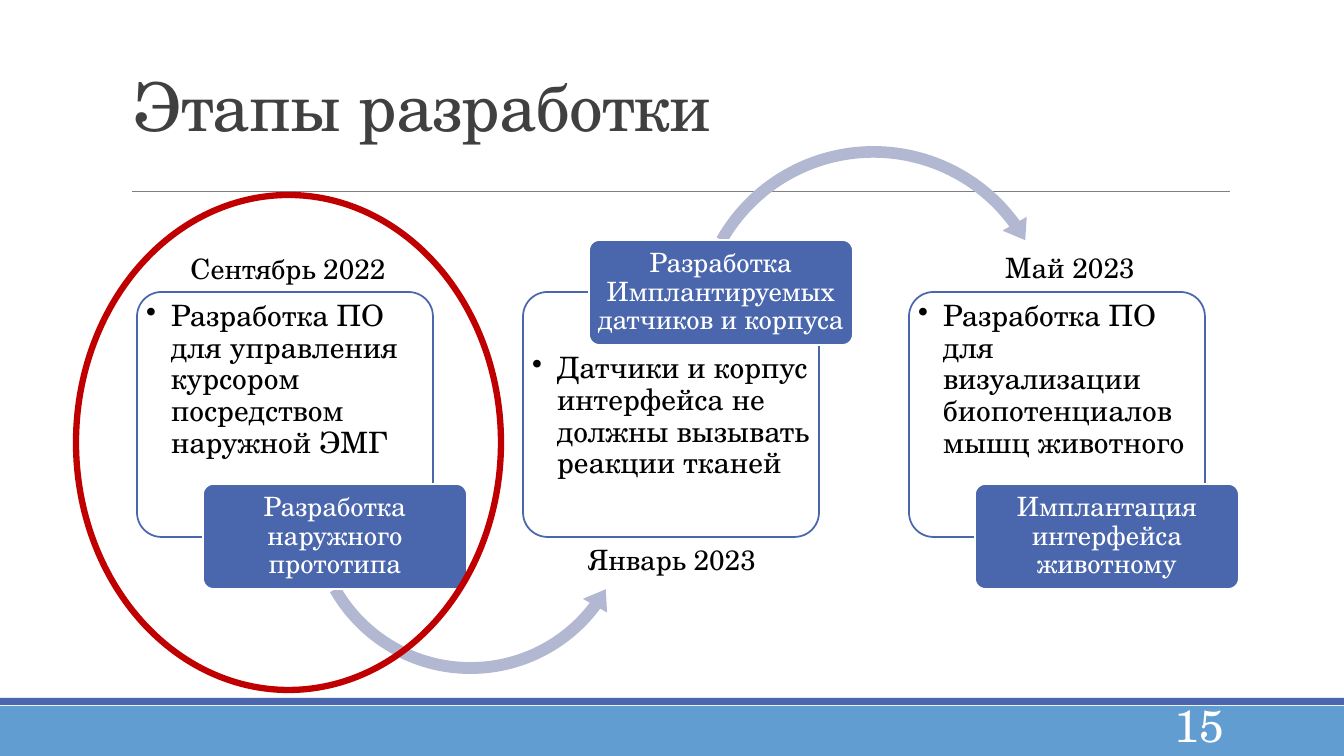
from lxml.etree import SubElement
from pptx import Presentation
from pptx.dml.color import RGBColor
from pptx.enum.shapes import MSO_CONNECTOR, MSO_SHAPE
from pptx.enum.text import MSO_ANCHOR, MSO_AUTO_SIZE, PP_ALIGN
from pptx.oxml.ns import qn
from pptx.util import Emu, Pt

WIDTH, HEIGHT = 1344, 756
SCALE = 12192000 / WIDTH
FONT = "TeX Gyre Schola"
BLUE, SKY, LAVENDER, RED = "4A66AC", "629DD1", "B2B8D2", "C00000"
WHITE, BLACK, GREY, CHARCOAL = "FFFFFF", "000000", "808080", "404040"


def px(value):
    return Emu(round(value * SCALE))


def color(value):
    return RGBColor.from_string(value)


def apply(target, values):
    for name, value in values.items():
        setattr(target, name, value)


class SlideBuilder:
    def __init__(self, slide, font):
        self.slide = slide
        self.font = font

    def shape(self, kind, box, fill=None, line=None, line_width=1.25, adjustments=()):
        shape = self.slide.shapes.add_shape(kind, *map(px, box))
        shape.shadow.inherit = False
        if fill:
            shape.fill.solid()
            shape.fill.fore_color.rgb = color(fill)
        else:
            shape.fill.background()
        if line:
            shape.line.color.rgb = color(line)
            shape.line.width = Pt(line_width)
        else:
            shape.line.fill.background()
        for index, value in enumerate(adjustments):
            shape.adjustments[index] = value / 100000
        return shape

    def set_text(self, shape, text, size, ink, insets=(10, 5, 10, 5), spacing=1.0,
                 align=PP_ALIGN.LEFT, anchor=MSO_ANCHOR.TOP):
        sides = ("margin_left", "margin_top", "margin_right", "margin_bottom")
        apply(shape.text_frame, {"word_wrap": True, "vertical_anchor": anchor,
                                 **dict(zip(sides, map(px, insets)))})
        paragraph = shape.text_frame.paragraphs[0]
        apply(paragraph, {"alignment": align, "line_spacing": spacing})
        run = paragraph.add_run()
        run.text = text
        apply(run.font, {"name": self.font, "size": Pt(size)})
        run.font.color.rgb = color(ink)
        return paragraph

    def text(self, box, text, size, ink, **style):
        shape = self.slide.shapes.add_textbox(*map(px, box))
        self.set_text(shape, text, size, ink, **style)
        return shape

    def title(self, box, text):
        shape = self.text(box, text, 48, CHARCOAL, spacing=0.85, anchor=MSO_ANCHOR.BOTTOM)
        shape.text_frame.paragraphs[0].runs[0].font._element.set("spc", "-50")

    def divider(self, start, end):
        connector = self.slide.shapes.add_connector(
            MSO_CONNECTOR.STRAIGHT, *map(px, start + end))
        connector.line.color.rgb = color(GREY)
        connector.line.width = Pt(0.5)
        SubElement(connector._element.spPr, qn("a:effectLst"))

    def card(self, box, text, top_inset):
        shape = self.shape(MSO_SHAPE.ROUNDED_RECTANGLE, box, WHITE, BLUE,
                           adjustments=(10000,))
        fill = shape._element.spPr.find(qn("a:solidFill"))
        SubElement(fill[0], qn("a:alpha")).set("val", "90000")
        paragraph = self.set_text(shape, text, 21, BLACK, insets=(2, top_inset, 2, 2),
                                  spacing=0.9)
        properties = paragraph._p.get_or_add_pPr()
        properties.set("marL", str(px(25)))
        properties.set("indent", str(px(-25)))
        SubElement(properties, qn("a:buChar")).set("char", "•")

    def label(self, box, text):
        shape = self.shape(MSO_SHAPE.ROUNDED_RECTANGLE, box, BLUE, WHITE,
                           adjustments=(10000,))
        self.set_text(shape, text, 19, WHITE, insets=(4, 3, 4, 3), spacing=0.9,
                      align=PP_ALIGN.CENTER, anchor=MSO_ANCHOR.MIDDLE)

    def date(self, box, text):
        shape = self.text(box, text, 20, BLACK, align=PP_ALIGN.CENTER)
        shape.text_frame.auto_size = MSO_AUTO_SIZE.SHAPE_TO_FIT_TEXT


def main():
    presentation = Presentation()
    apply(presentation, {"slide_width": px(WIDTH), "slide_height": px(HEIGHT)})
    slide = presentation.slides.add_slide(presentation.slide_layouts[6])
    builder = SlideBuilder(slide, FONT)

    builder.shape(MSO_SHAPE.RECTANGLE, (0, 706, WIDTH, 50), SKY)
    builder.shape(MSO_SHAPE.RECTANGLE, (0, 698, WIDTH, 7), BLUE)
    builder.divider((132, 191), (1230, 191))
    builder.title((124, 50, 704, 100), "Этапы разработки")

    low, high = (2, 484), (54, 240)
    stages = [
        ("Разработка ПО для управления курсором посредством наружной ЭМГ",
         "Разработка наружного прототипа", low,
         (MSO_SHAPE.LEFT_CIRCULAR_ARROW, (301, 343, 339, 339),
          (3500, 433600, 2209100, 9024500, 4100))),
        ("Датчики и корпус интерфейса не должны вызывать реакции тканей",
         "Разработка Имплантируемых датчиков и корпуса", high,
         (MSO_SHAPE.CIRCULAR_ARROW, (685, 138, 377, 377),
          (3100, 386700, 19437800, 12575500, 3700))),
        ("Разработка ПО для визуализации биопотенциалов мышц животного",
         "Имплантация интерфейса животному", low, None),
    ]
    for index, (task, name, (top_inset, label_top), arrow) in enumerate(stages):
        left = 137 + 386 * index
        builder.card((left, 292, 296, 245), task, top_inset)
        if arrow:
            kind, box, adjustments = arrow
            builder.shape(kind, box, LAVENDER, adjustments=adjustments)
        builder.label((left + 66, label_top, 264, 105), name)

    builder.text((1090, 705, 144, 40), "15", 32, WHITE,
                 align=PP_ALIGN.RIGHT, anchor=MSO_ANCHOR.MIDDLE)
    builder.shape(MSO_SHAPE.OVAL, (76, 195, 425, 495), line=RED, line_width=4.5)
    for left, top, text in ((178, 246, "Сентябрь 2022"), (960, 245, "Май 2023"),
                            (562, 537, "Январь 2023")):
        builder.date((left, top, 220, 44), text)

    presentation.save("out.pptx")


if __name__ == "__main__":
    main()
